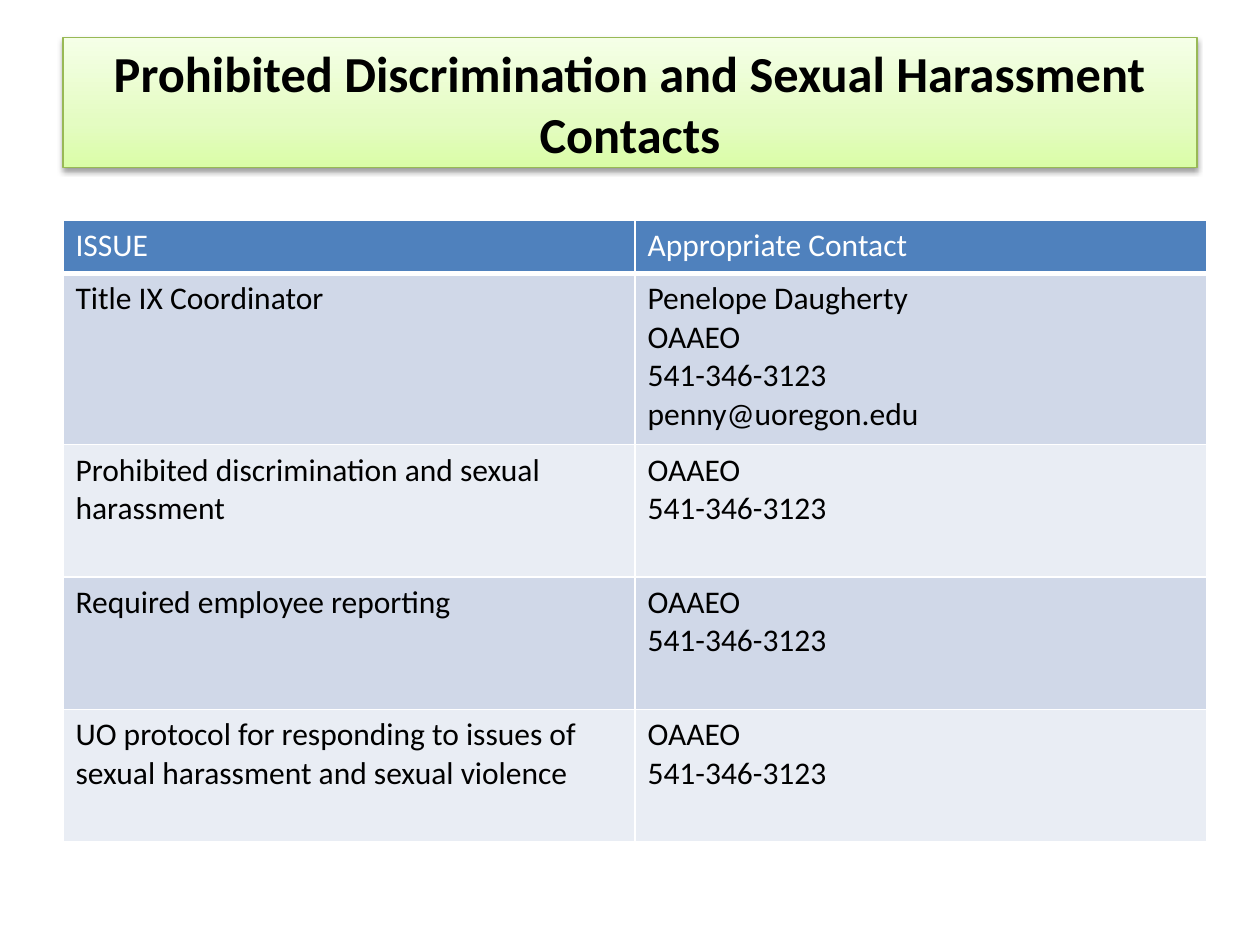
import copy

import pptx
import pptx.dml.color
import pptx.enum.shapes
import pptx.enum.text
import pptx.oxml
import pptx.oxml.ns
import pptx.util

Inches = pptx.util.Inches
Pt = pptx.util.Pt
NAMESPACE = pptx.oxml.ns.nsdecls("a")


def color(code):
    return pptx.dml.color.RGBColor.from_string(code)


class SlideBuilder:
    font = "Calibri"
    title_size = 28.8
    body_size = 18
    ink = "000000"
    white = "FFFFFF"
    header_fill = "4F81BD"
    band_fills = ("D0D8E8", "E9EDF4")
    title_line = "98B955"
    title_stops = ((0, "DAFDA7"), (0.35, "E4FCC2"), (1, "F5FFE7"))

    def __init__(self, page):
        self.page = page

    def style(self, paragraph, size, code, bold=False):
        paragraph.font.name = self.font
        paragraph.font.size = Pt(size)
        paragraph.font.color.rgb = color(code)
        paragraph.font.bold = bold

    def gradient(self, fill):
        fill.gradient()
        fill.gradient_angle = 90
        # A new gradient has two stops; the third is a copy of the last.
        last = fill.gradient_stops[1]._gs
        last.addnext(copy.deepcopy(last))
        for stop, (position, code) in zip(fill.gradient_stops, self.title_stops):
            stop.position = position
            stop.color.rgb = color(code)

    def shadow(self, box):
        box.shadow.inherit = False
        effects = box._element.spPr.find(pptx.oxml.ns.qn("a:effectLst"))
        effects.append(pptx.oxml.parse_xml(
            f'<a:outerShdw {NAMESPACE} blurRad="{Pt(3.1)}" dist="{Pt(1.6)}" '
            'dir="5400000" rotWithShape="0"><a:srgbClr val="000000">'
            '<a:alpha val="38000"/></a:srgbClr></a:outerShdw>'))

    def title(self, text, left, top, width, height):
        box = self.page.shapes.add_shape(
            pptx.enum.shapes.MSO_SHAPE.RECTANGLE,
            Inches(left), Inches(top), Inches(width), Inches(height))
        self.gradient(box.fill)
        box.line.color.rgb = color(self.title_line)
        box.line.width = Pt(0.75)
        self.shadow(box)
        frame = box.text_frame
        frame.word_wrap = True
        frame.vertical_anchor = pptx.enum.text.MSO_ANCHOR.MIDDLE
        paragraph = frame.paragraphs[0]
        paragraph.text = text
        paragraph.alignment = pptx.enum.text.PP_ALIGN.CENTER
        self.style(paragraph, self.title_size, self.ink, bold=True)

    def borders(self, cell, bottom):
        properties = cell._tc.get_or_add_tcPr()
        sides = (("L", 1), ("R", 1), ("T", 1), ("B", bottom))
        for index, (side, width) in enumerate(sides):
            properties.insert(index, pptx.oxml.parse_xml(
                f'<a:ln{side} {NAMESPACE} w="{Pt(width)}"><a:solidFill>'
                f'<a:srgbClr val="{self.white}"/></a:solidFill></a:ln{side}>'))

    def cell(self, cell, text, row):
        header = row == 0
        cell.fill.solid()
        cell.fill.fore_color.rgb = color(
            self.header_fill if header else self.band_fills[(row - 1) % 2])
        self.borders(cell, bottom=3 if header else 1)
        cell.text = text
        for paragraph in cell.text_frame.paragraphs:
            self.style(paragraph, self.body_size, self.white if header else self.ink)

    def table(self, rows, left, top, column_width, heights):
        columns = len(rows[0])
        table = self.page.shapes.add_table(
            len(rows), columns, Inches(left), Inches(top),
            Inches(column_width * columns), Inches(sum(heights))).table
        for column in table.columns:
            column.width = Inches(column_width)
        for row, (texts, height) in enumerate(zip(rows, heights)):
            table.rows[row].height = Inches(height)
            for column, text in enumerate(texts):
                self.cell(table.cell(row, column), text, row)


def main():
    deck = pptx.Presentation()
    deck.slide_width = Inches(10)
    deck.slide_height = Inches(7.5)
    builder = SlideBuilder(deck.slides.add_slide(deck.slide_layouts[6]))

    # Title banner
    builder.title("Prohibited Discrimination and Sexual Harassment\vContacts",
                  0.5, 0.3, 9, 1.03)

    # Contact table
    office = "OAAEO\n541-346-3123"
    contacts = [
        ("ISSUE", "Appropriate Contact"),
        ("Title IX Coordinator",
         f"Penelope Daugherty\n{office}\npenny@uoregon.edu"),
        ("Prohibited discrimination and sexual harassment", office),
        ("Required employee reporting", office),
        ("UO protocol for responding to issues of sexual harassment "
         "and sexual violence", office),
    ]
    builder.table(contacts, 0.5, 1.75, 4.54, [0.42, 1.36] + [1.05] * 3)

    deck.save("out.pptx")


if __name__ == "__main__":
    main()
